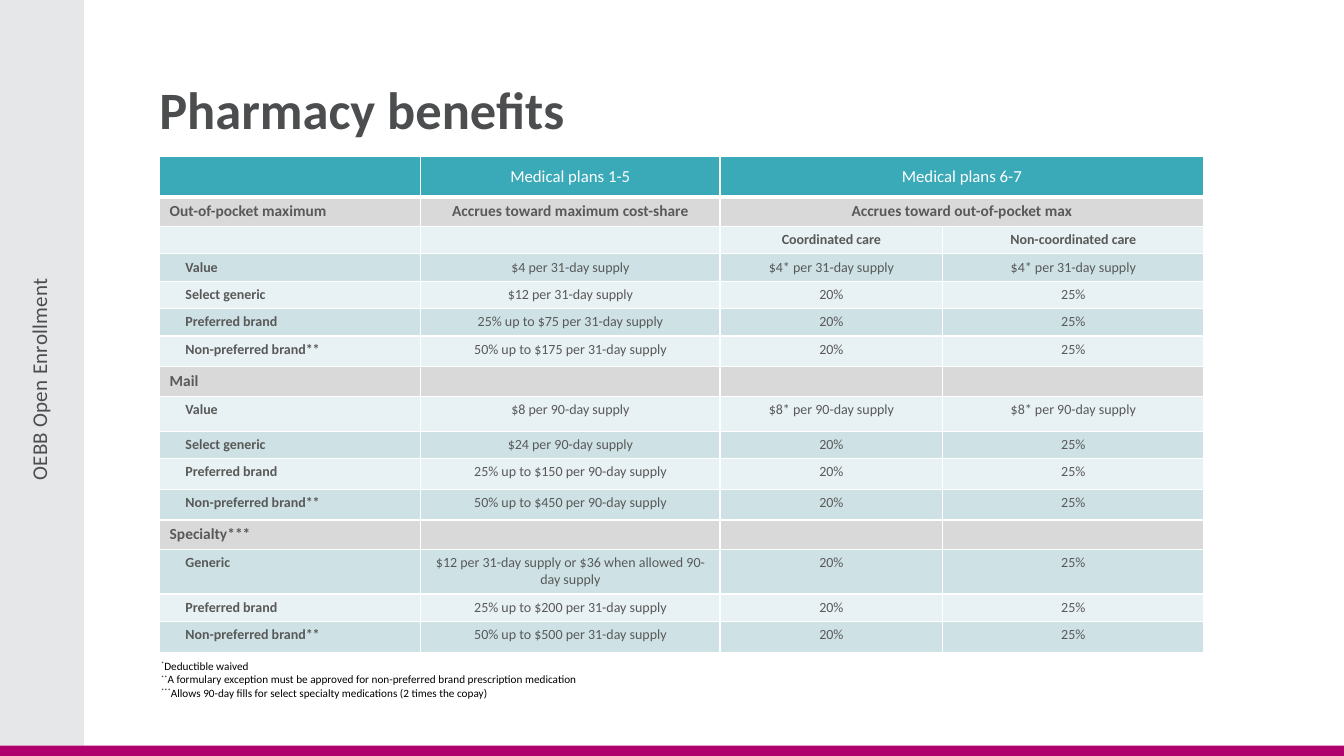
from pptx import Presentation
from pptx.dml.color import RGBColor
from pptx.enum.shapes import MSO_SHAPE
from pptx.enum.text import MSO_ANCHOR, PP_ALIGN
from pptx.oxml.ns import qn
from pptx.util import Pt
from lxml import etree

RECTANGLE = MSO_SHAPE.RECTANGLE
TOP, MIDDLE = MSO_ANCHOR.TOP, MSO_ANCHOR.MIDDLE
LEFT, CENTER = PP_ALIGN.LEFT, PP_ALIGN.CENTER

WHITE = RGBColor(0xFF, 0xFF, 0xFF)
BLACK = RGBColor(0x00, 0x00, 0x00)
DARK = RGBColor(0x4C, 0x4D, 0x4F)
TEXT_GRAY = RGBColor(0x59, 0x59, 0x59)
SIDE_GRAY = RGBColor(0xE6, 0xE7, 0xE8)
MAGENTA = RGBColor(0xB0, 0x00, 0x6D)
TEAL = RGBColor(0x3A, 0xA9, 0xB8)
SECTION_GRAY = RGBColor(0xD9, 0xD9, 0xD9)
BANDS = (RGBColor(0xE8, 0xF1, 0xF3), RGBColor(0xCE, 0xE2, 0xE6))

FONT = "Calibri"
TITLE = {"size": Pt(37.5), "bold": True}
SIDE = {"size": Pt(15)}
NOTE = {"size": Pt(8)}
HEADER = {"size": Pt(12), "bold": False}
SECTION = {"size": Pt(11), "bold": True}
LABEL = {"size": Pt(10), "bold": True}
VALUE = {"size": Pt(10), "bold": False}

COLUMN_WIDTHS = (186.5, 213.8, 159.1, 186.5)
SHARES = ("20%", "25%")
HEADER_ROW, SUBHEADER_ROW = 0, 2
MERGED_ROWS = (0, 1)
SECTION_ROWS = (1, 7, 12)
ROWS = (
    (28.7, "", "Medical plans 1-5", "Medical plans 6-7", ""),
    (21.2, "Out-of-pocket maximum", "Accrues toward maximum cost-share",
     "Accrues toward out-of-pocket max", ""),
    (19.6, "", "", "Coordinated care", "Non-coordinated care"),
    (19.6, "Value", "$4 per 31-day supply", "$4* per 31-day supply", "$4* per 31-day supply"),
    (19.6, "Select generic", "$12 per 31-day supply", *SHARES),
    (19.6, "Preferred brand", "25% up to $75 per 31-day supply", *SHARES),
    (21.9, "Non-preferred brand**", "50% up to $175 per 31-day supply", *SHARES),
    (21.2, "Mail", "", "", ""),
    (25, "Value", "$8 per 90-day supply", "$8* per 90-day supply", "$8* per 90-day supply"),
    (19.6, "Select generic", "$24 per 90-day supply", *SHARES),
    (21.9, "Preferred brand", "25% up to $150 per 90-day supply", *SHARES),
    (21.9, "Non-preferred brand**", "50% up to $450 per 90-day supply", *SHARES),
    (21.2, "Specialty***", "", "", ""),
    (31.8, "Generic", "$12 per 31-day supply or $36 when allowed 90-day supply", *SHARES),
    (19.6, "Preferred brand", "25% up to $200 per 31-day supply", *SHARES),
    (21.9, "Non-preferred brand**", "50% up to $500 per 31-day supply", *SHARES),
)
FOOTNOTES = (
    ("*", "Deductible waived"),
    ("**", "A formulary exception must be approved for non-preferred brand prescription medication"),
    ("***", "Allows 90-day fills for select specialty medications (2 times the copay)"),
)


def add_bar(page, left, top, width, height, color):
    """Draw a plain filled rectangle."""
    bar = page.shapes.add_shape(RECTANGLE, Pt(left), Pt(top), Pt(width), Pt(height))
    bar.shadow.inherit = False
    bar.fill.solid()
    bar.fill.fore_color.rgb = color
    bar.line.fill.background()


def add_box(page, left, top, width, height, inset=True):
    """Add a wrapping text box and return its text frame."""
    frame = page.shapes.add_textbox(Pt(left), Pt(top), Pt(width), Pt(height)).text_frame
    frame.word_wrap = True
    if not inset:
        for side in ("left", "top", "right", "bottom"):
            setattr(frame, f"margin_{side}", 0)
    return frame


def add_span(para, text, style, color):
    """Add a formatted run to a paragraph."""
    span = para.add_run()
    span.text = text
    for name, value in {"name": FONT, **style}.items():
        setattr(span.font, name, value)
    span.font.color.rgb = color
    return span


def set_borders(cell, bottom=1):
    """Give a cell white borders."""
    properties = cell._tc.get_or_add_tcPr()
    for tag, width in (("lnL", 1), ("lnR", 1), ("lnT", 1), ("lnB", bottom)):
        line = etree.SubElement(properties, qn(f"a:{tag}"), w=str(Pt(width)))
        fill = etree.SubElement(line, qn("a:solidFill"))
        etree.SubElement(fill, qn("a:srgbClr"), val=str(WHITE))


def cell_look(row, column):
    """Return the fill, text style and text colour of a table cell."""
    if row == HEADER_ROW:
        return TEAL, HEADER, WHITE
    if row in SECTION_ROWS:
        return SECTION_GRAY, SECTION, TEXT_GRAY
    style = LABEL if column == 0 or row == SUBHEADER_ROW else VALUE
    return BANDS[row % 2], style, TEXT_GRAY


def fill_cell(cell, text, row, column):
    """Write and format one table cell."""
    fill, style, color = cell_look(row, column)
    set_borders(cell, 3 if row == HEADER_ROW else 1)
    cell.fill.solid()
    cell.fill.fore_color.rgb = fill
    cell.vertical_anchor = MIDDLE if row == HEADER_ROW else TOP
    para = cell.text_frame.paragraphs[0]
    para.alignment = CENTER if column else LEFT
    if column == 0 and style is LABEL:
        cell.margin_left = Pt(18.5)
    if text:
        add_span(para, text, style, color)
    else:
        etree.SubElement(para._p, qn("a:endParaRPr"), sz=str(int(style["size"].pt * 100)))


def add_benefits_table(page):
    """Add the table of pharmacy benefits."""
    heights = [height for height, *_ in ROWS]
    table = page.shapes.add_table(len(ROWS), len(COLUMN_WIDTHS), Pt(114), Pt(111.8),
                                  Pt(sum(COLUMN_WIDTHS)), Pt(sum(heights))).table
    table.first_row = table.horz_banding = False
    for column, width in zip(table.columns, COLUMN_WIDTHS):
        column.width = Pt(width)
    for row, (height, *texts) in enumerate(ROWS):
        table.rows[row].height = Pt(height)
        for column, text in enumerate(texts):
            fill_cell(table.cell(row, column), text, row, column)
    for row in MERGED_ROWS:
        table.cell(row, 2).merge(table.cell(row, 3))


def add_side_label(page):
    """Add the label that reads upwards in the side band."""
    frame = add_box(page, 21.6, 144, 15.1, 254.2, inset=False)
    frame._txBody.bodyPr.set("vert", "vert270")
    para = frame.paragraphs[0]
    para.alignment = CENTER
    para.line_spacing = Pt(15.1)
    span = add_span(para, "OEBB Open Enrollment", SIDE, DARK)
    span.font._element.set("spc", "20")


def add_title(page):
    """Add the slide title."""
    frame = add_box(page, 113.8, 54, 746.6, 46.8, inset=False)
    frame.vertical_anchor = MIDDLE
    add_span(frame.paragraphs[0], "Pharmacy benefits", TITLE, DARK)


def add_footnotes(page):
    """Add the footnotes with raised marks."""
    frame = add_box(page, 108, 467.3, 681.1, 46.1)
    for index, (mark, text) in enumerate(FOOTNOTES):
        para = frame.add_paragraph() if index else frame.paragraphs[0]
        raised = add_span(para, mark, NOTE, BLACK)
        raised.font._element.set("baseline", "30000")
        add_span(para, text, NOTE, BLACK)


def main():
    """Build the slide and save it."""
    deck = Presentation()
    deck.slide_width, deck.slide_height = Pt(960), Pt(540)
    page = deck.slides.add_slide(deck.slide_layouts[6])
    add_bar(page, 0, 0, 60, 532.6, SIDE_GRAY)
    add_bar(page, 0, 532.6, 960, 7.4, MAGENTA)
    add_side_label(page)
    add_title(page)
    add_footnotes(page)
    add_benefits_table(page)
    deck.save("out.pptx")


if __name__ == "__main__":
    main()
